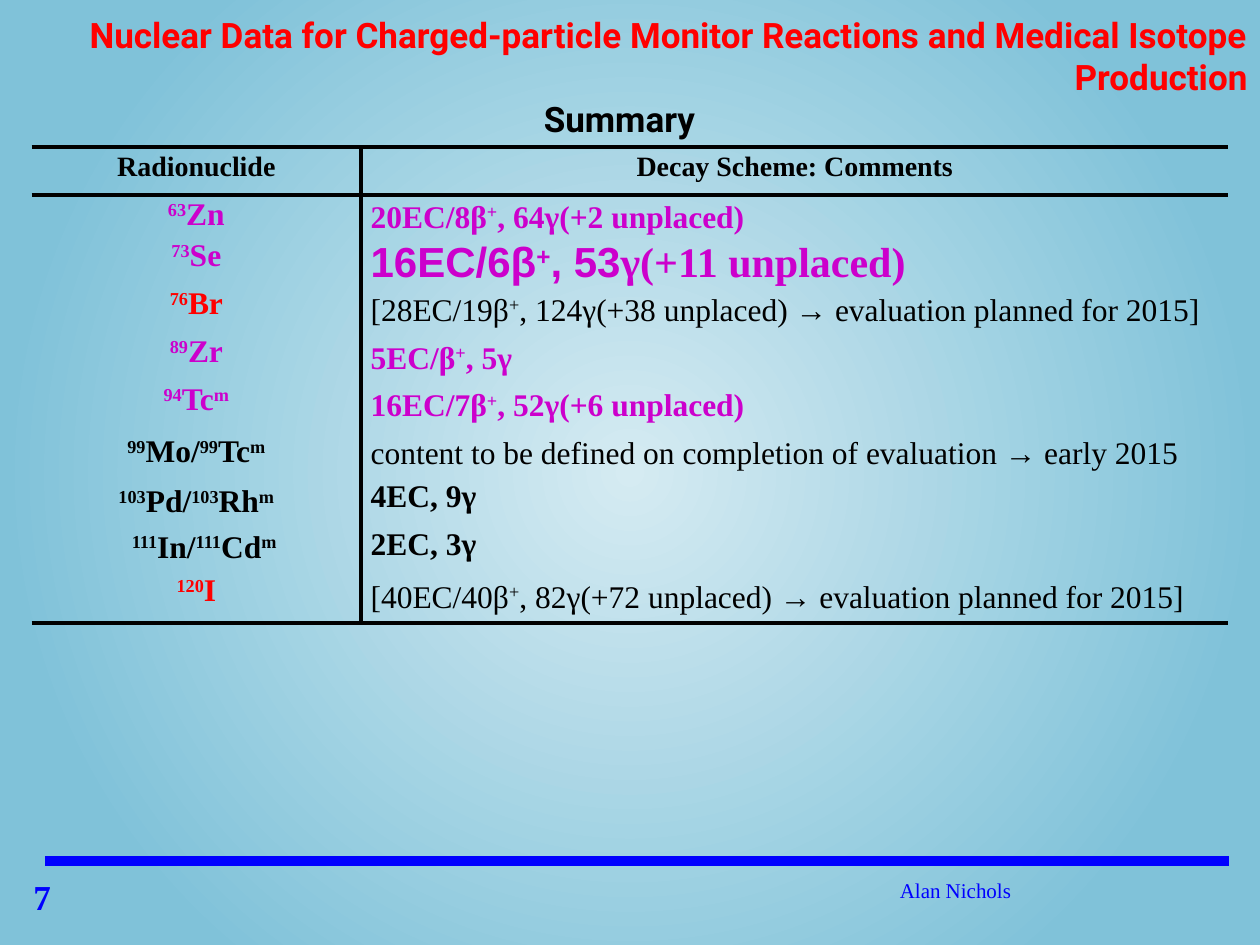
from dataclasses import dataclass

from lxml import etree
from pptx import Presentation
from pptx.dml.color import RGBColor
from pptx.enum.shapes import MSO_CONNECTOR
from pptx.enum.text import MSO_ANCHOR, PP_ALIGN
from pptx.oxml.ns import qn
from pptx.util import Inches, Pt

LEFT, CENTER, RIGHT = PP_ALIGN.LEFT, PP_ALIGN.CENTER, PP_ALIGN.RIGHT
TOP = MSO_ANCHOR.TOP
STRAIGHT = MSO_CONNECTOR.STRAIGHT


@dataclass(frozen=True)
class Theme:
    serif: str = "Times New Roman"
    sans: str = "Arial"
    display: str = "Roboto"
    black: str = "000000"
    red: str = "FF0000"
    purple: str = "CC00CC"
    blue: str = "0000FF"
    glow: str = "D5EBF2"
    sky: str = "80C2D9"
    title_size: int = 20
    header_size: int = 16
    body_size: int = 18
    large_size: int = 24
    small_size: int = 12
    border_width: float = 2.25
    rule_width: float = 5.5


THEME = Theme()
WIDTH, HEIGHT = Inches(10), Inches(7.5)
COLUMNS, ROWS = 120, 90
TABLE_COLUMNS = (31.4, 82.6)
HEADER_ROW, FIRST_ROW, BODY_ROW = 4.56, 4.3, 4.56
TIGHT, LOOSE, WIDE = Pt(19.2), Pt(21.6), 1.15
CELL_INSET = 0.9
NUDGED_INSET = 2.4

NUCLIDES = [
    ("^63^Zn", LOOSE, THEME.purple, "20EC/8β^+^, 64γ(+2 unplaced)", WIDE, True),
    ("^73^Se", TIGHT, THEME.purple, "16EC/6β^+^, 53", None, True),
    ("^76^Br", TIGHT, THEME.red,
     "[28EC/19β^+^, 124γ(+38 unplaced) → evaluation planned for 2015]", WIDE, False),
    ("^89^Zr", TIGHT, THEME.purple, "5EC/β^+^, 5γ", WIDE, True),
    ("^94^Tc^m^", TIGHT, THEME.purple, "16EC/7β^+^, 52γ(+6 unplaced)", WIDE, True),
    ("^99^Mo/^99^Tc^m^", LOOSE, THEME.black,
     "content to be defined on completion of evaluation → early 2015", WIDE, False),
    ("^103^Pd/^103^Rh^m^", WIDE, THEME.black, "4EC, 9γ", None, True),
    ("^111^In/^111^Cd^m^", LOOSE, THEME.black, "2EC, 3γ", None, True),
    ("^120^I", TIGHT, THEME.red,
     "[40EC/40β^+^, 82γ(+72 unplaced) → evaluation planned for 2015]", WIDE, False),
]
SELENIUM_ROW = 2
INDIUM_ROW = 8


def across(columns):
    return round(WIDTH * columns / COLUMNS)


def down(rows):
    return round(HEIGHT * rows / ROWS)


def write(paragraph, text, *, size=THEME.body_size, font=THEME.serif,
          color=THEME.black, bold=False, align=LEFT, spacing=None):
    paragraph.alignment = align
    paragraph.line_spacing = spacing
    for index, piece in enumerate(text.split("^")):
        if not piece:
            continue
        run = paragraph.add_run()
        run.text = piece
        run.font.size = Pt(size)
        run.font.name = font
        run.font.bold = bold
        run.font.color.rgb = RGBColor.from_string(color)
        if index % 2:
            run._r.get_or_add_rPr().set("baseline", "30000")


def add_text_box(slide, left, top, width, height):
    box = slide.shapes.add_textbox(across(left), down(top), across(width), down(height))
    box.text_frame.word_wrap = True
    return box.text_frame


def paint_background(slide):
    fill = slide.background.fill
    fill.gradient()
    stops = zip(fill.gradient_stops, (THEME.glow, THEME.sky), (0, 0.8))
    for stop, color, position in stops:
        stop.color.rgb = RGBColor.from_string(color)
        stop.position = position
    gradient = slide._element.find(".//" + qn("a:gradFill"))
    gradient.remove(gradient.find(qn("a:lin")))
    circle = etree.SubElement(gradient, qn("a:path"), path="circle")
    etree.SubElement(circle, qn("a:fillToRect"), l="50000", t="50000", r="50000", b="50000")


def add_rule(slide, left, right, top):
    rule = slide.shapes.add_connector(
        STRAIGHT, across(left), down(top), across(right), down(top))
    rule.line.color.rgb = RGBColor.from_string(THEME.blue)
    rule.line.width = Pt(THEME.rule_width)
    etree.SubElement(rule._element.spPr, qn("a:effectLst"))


def set_borders(cell, edges):
    properties = cell._tc.get_or_add_tcPr()
    for edge in "LRTB":
        line = etree.SubElement(properties, qn("a:ln" + edge))
        if edge in edges:
            line.set("w", str(Pt(THEME.border_width)))
            fill = etree.SubElement(line, qn("a:solidFill"))
            etree.SubElement(fill, qn("a:srgbClr"), val=THEME.black)
        else:
            etree.SubElement(line, qn("a:noFill"))


def style_cell(cell, edges):
    set_borders(cell, edges)
    cell.fill.background()
    cell.margin_left = cell.margin_right = across(CELL_INSET)
    cell.margin_top = cell.margin_bottom = 0
    cell.vertical_anchor = TOP


def add_nuclide_table(slide):
    heights = [HEADER_ROW, FIRST_ROW] + [BODY_ROW] * (len(NUCLIDES) - 1)
    frame = slide.shapes.add_table(
        len(heights), len(TABLE_COLUMNS), across(3), down(14),
        across(sum(TABLE_COLUMNS)), down(sum(heights)))
    table = frame.table
    table.first_row = table.horz_banding = False
    for column, width in zip(table.columns, TABLE_COLUMNS):
        column.width = across(width)
    for index, height in enumerate(heights):
        table.rows[index].height = down(height)
        edges = {0: "TB", 1: "T", len(heights) - 1: "B"}.get(index, "")
        style_cell(table.cell(index, 0), edges + "R")
        style_cell(table.cell(index, 1), edges + "L")

    def paragraph_at(row, column):
        return table.cell(row, column).text_frame.paragraphs[0]

    for column, heading in enumerate(("Radionuclide", "Decay Scheme: Comments")):
        write(paragraph_at(0, column), heading, size=THEME.header_size,
              bold=True, align=CENTER, spacing=WIDE)
    for row, nuclide in enumerate(NUCLIDES, start=1):
        name, name_spacing, color, comment, comment_spacing, bold = nuclide
        write(paragraph_at(row, 0), name, color=color, bold=True,
              align=CENTER, spacing=name_spacing)
        large = row == SELENIUM_ROW
        write(paragraph_at(row, 1), comment, bold=bold, spacing=comment_spacing,
              color=color if bold else THEME.black,
              font=THEME.sans if large else THEME.serif,
              size=THEME.large_size if large else THEME.body_size)
    write(paragraph_at(SELENIUM_ROW, 1), "γ(+11 unplaced)",
          size=THEME.large_size, color=THEME.purple, bold=True)
    table.cell(INDIUM_ROW, 0).margin_left = across(NUDGED_INSET)


def add_title(slide):
    title = add_text_box(slide, -2, 0.7, 122, 13.3)
    heading = {"size": THEME.title_size, "font": THEME.display, "bold": True}
    write(title.paragraphs[0],
          "Nuclear Data for Charged-particle Monitor Reactions and Medical Isotope Production",
          color=THEME.red, align=RIGHT, **heading)
    write(title.add_paragraph(), "Summary", align=CENTER, **heading)


def add_footer(slide):
    add_rule(slide, 4.3, 117, 82)
    number = add_text_box(slide, 2, 82.8, 10, 5.2)
    write(number.paragraphs[0], "7", size=THEME.title_size, color=THEME.blue, bold=True)
    author = add_text_box(slide, 66, 83, 50, 6)
    write(author.paragraphs[0], "Alan Nichols", size=THEME.small_size,
          color=THEME.blue, align=CENTER)


def main():
    presentation = Presentation()
    presentation.slide_width, presentation.slide_height = WIDTH, HEIGHT
    slide = presentation.slides.add_slide(presentation.slide_layouts[6])
    paint_background(slide)
    add_nuclide_table(slide)
    add_title(slide)
    add_footer(slide)
    presentation.save("out.pptx")


if __name__ == "__main__":
    main()
